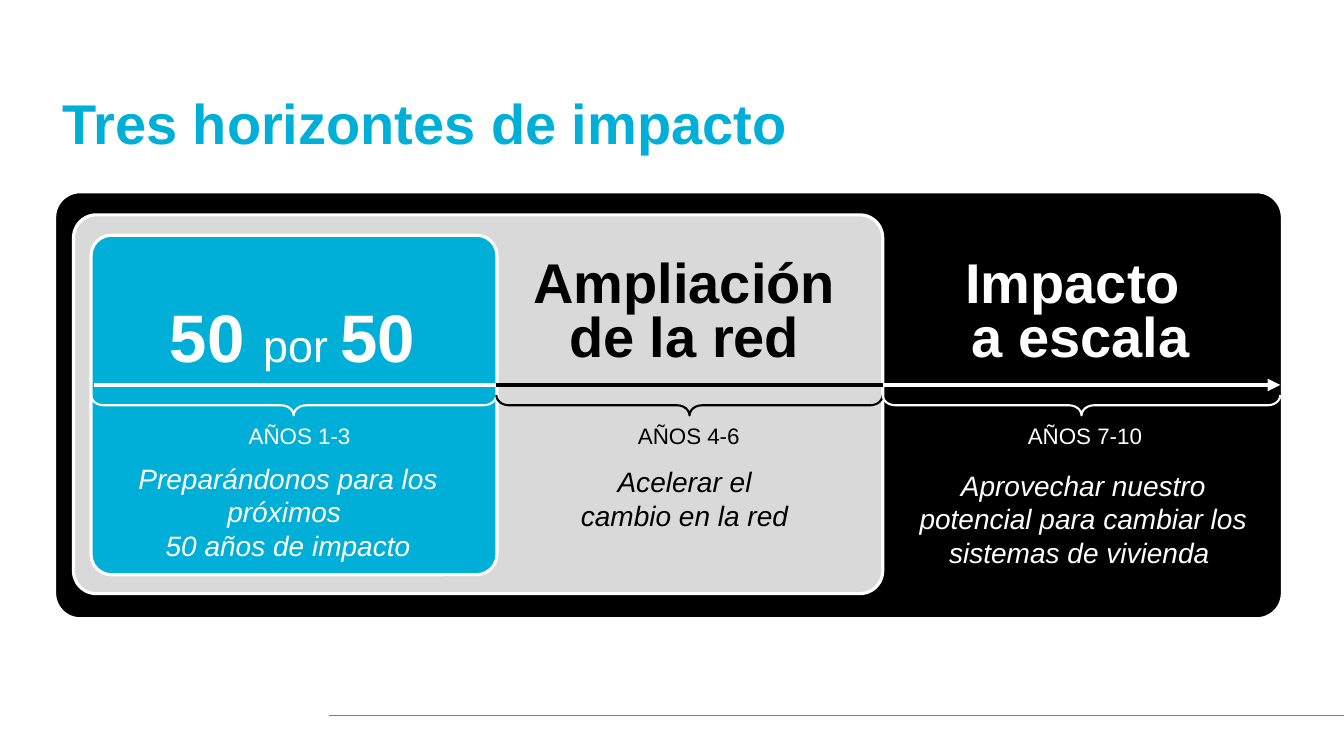
"""Build the slide on three horizons of impact."""
import pptx
import pptx.dml.color
import pptx.enum.shapes
import pptx.enum.text
import pptx.oxml.ns
import pptx.util
import lxml.etree

Pt = pptx.util.Pt
SHAPES = pptx.enum.shapes.MSO_SHAPE
ALIGN = pptx.enum.text.PP_ALIGN
WHITE, BLACK, GREY, BLUE, RULE = "FFFFFF", "000000", "D9D9D9", "00AFD7", "7F7F7F"
FONT = "Arial"

TITLE = "Tres horizontes de impacto"
CARDS = [
    (39, 137, 877, 305, BLACK),
    (52.5, 153.5, 578, 270.5, GREY),
    (65, 168, 290, 242.5, BLUE),
]
EDGES = [65, 354.5, 630.5, 914.5]
ARROW_Y, BRACE_Y, BRACE_DEPTH = 275, 289.5, 14.5
STAGES = [
    {"color": WHITE,
     "heading": ([("50 ", 48, True), ("por ", 32, False), ("50", 48, True)], 107, 207.5, 204, 65.5),
     "years": ("AÑOS 1-3", 214),
     "caption": ("Preparándonos para los próximos \v50 años de impacto", 76.5, 326, 258.5, 80)},
    {"color": BLACK,
     "heading": ([("Ampliación de la red", 40, True)], 369.5, 183.5, 238.5, 84),
     "years": ("AÑOS 4-6", 492),
     "caption": ("Acelerar el cambio en la red", 402, 328.5, 174, 55.5)},
    {"color": WHITE,
     "heading": ([("Impacto \va escala", 40, True)], 652.5, 183.5, 238.5, 84),
     "years": ("AÑOS 7-10", 775),
     "caption": ("Aprovechar nuestro potencial para cambiar los sistemas de vivienda ",
                 644.5, 331, 258.5, 80)},
]


def rgb(color):
    """Turn a hex string into a colour."""
    return pptx.dml.color.RGBColor.from_string(color)


def add_shape(page, kind, left, top, width, height, line, weight, fill=None):
    """Add an outlined preset shape."""
    shape = page.shapes.add_shape(kind, Pt(left), Pt(top), Pt(width), Pt(height))
    shape.shadow.inherit = False
    if fill:
        shape.fill.solid()
        shape.fill.fore_color.rgb = rgb(fill)
    else:
        shape.fill.background()
    shape.line.color.rgb = rgb(line)
    shape.line.width = Pt(weight)
    return shape


def add_line(page, start, end, y, color, weight, arrow=False):
    """Add a horizontal line, with an arrowhead if asked."""
    line = page.shapes.add_connector(
        pptx.enum.shapes.MSO_CONNECTOR.STRAIGHT, Pt(start), Pt(y), Pt(end), Pt(y))
    line.line.color.rgb = rgb(color)
    line.line.width = Pt(weight)
    properties = line.element.spPr
    if arrow:
        outline = properties.find(pptx.oxml.ns.qn("a:ln"))
        lxml.etree.SubElement(outline, pptx.oxml.ns.qn("a:tailEnd"), type="triangle")
    lxml.etree.SubElement(properties, pptx.oxml.ns.qn("a:effectLst"))


def add_text(page, spans, left, top, width, height, color, italic=False):
    """Add a centred text box made of (text, size, bold) spans."""
    box = page.shapes.add_textbox(Pt(left), Pt(top), Pt(width), Pt(height))
    box.text_frame.word_wrap = True
    para = box.text_frame.paragraphs[0]
    para.alignment = ALIGN.CENTER
    para.font.name = FONT
    para.font.italic = italic
    para.font.color.rgb = rgb(color)
    if len(spans) == 1:
        para.text, size, para.font.bold = spans[0]
        para.font.size = Pt(size)
        return para
    for text, size, bold in spans:
        span = para.add_run()
        span.text = text
        span.font.size = Pt(size)
        span.font.bold = bold
    return para


def add_title(page):
    """Place and format the title."""
    title = page.shapes.title
    title.left, title.top, title.width, title.height = Pt(44.5), Pt(51), Pt(660), Pt(78)
    frame = title.text_frame
    frame.margin_left = frame.margin_right = frame.margin_top = frame.margin_bottom = 0
    frame.vertical_anchor = pptx.enum.text.MSO_ANCHOR.MIDDLE
    frame.auto_size = pptx.enum.text.MSO_AUTO_SIZE.NONE
    frame.text = TITLE
    para = frame.paragraphs[0]
    para.alignment = ALIGN.LEFT
    para.line_spacing = 0.9
    para.font.name, para.font.size, para.font.bold = FONT, Pt(40), True
    para.font.color.rgb = rgb(BLUE)


def add_stage(page, stage, start, end):
    """Add the heading, brace, years and caption of one stage."""
    color = stage["color"]
    spans, *place = stage["heading"]
    heading = add_text(page, spans, *place, color)
    if len(spans) == 1:
        heading.line_spacing = Pt(38)
    length = end - start
    brace = add_shape(page, SHAPES.RIGHT_BRACE, (start + end - BRACE_DEPTH) / 2,
                      BRACE_Y - length / 2, BRACE_DEPTH, length, color, 1.5)
    brace.rotation = 90
    brace.adjustments[0] = 0.62
    years, center = stage["years"]
    add_text(page, [(years, 16, False)], center - 60, 298, 120, 26.5, color)
    caption, *place = stage["caption"]
    add_text(page, [(caption, 20, False)], *place, color, italic=True)


def main():
    """Build and save the deck."""
    deck = pptx.Presentation()
    deck.slide_width, deck.slide_height = Pt(960), Pt(540)
    page = deck.slides.add_slide(deck.slide_layouts[5])
    add_title(page)
    add_line(page, 235, 960, 511, RULE, 0.75)
    for left, top, width, height, fill in CARDS:
        card = add_shape(page, SHAPES.ROUNDED_RECTANGLE, left, top, width, height, WHITE, 2.25, fill)
        card.adjustments[0] = 0.06
    add_line(page, EDGES[0] + 2, EDGES[3], ARROW_Y, WHITE, 3, arrow=True)
    add_line(page, EDGES[1], EDGES[2], ARROW_Y, BLACK, 3)
    for stage, start, end in zip(STAGES, EDGES, EDGES[1:]):
        add_stage(page, stage, start, end)
    deck.save("out.pptx")


if __name__ == "__main__":
    main()
